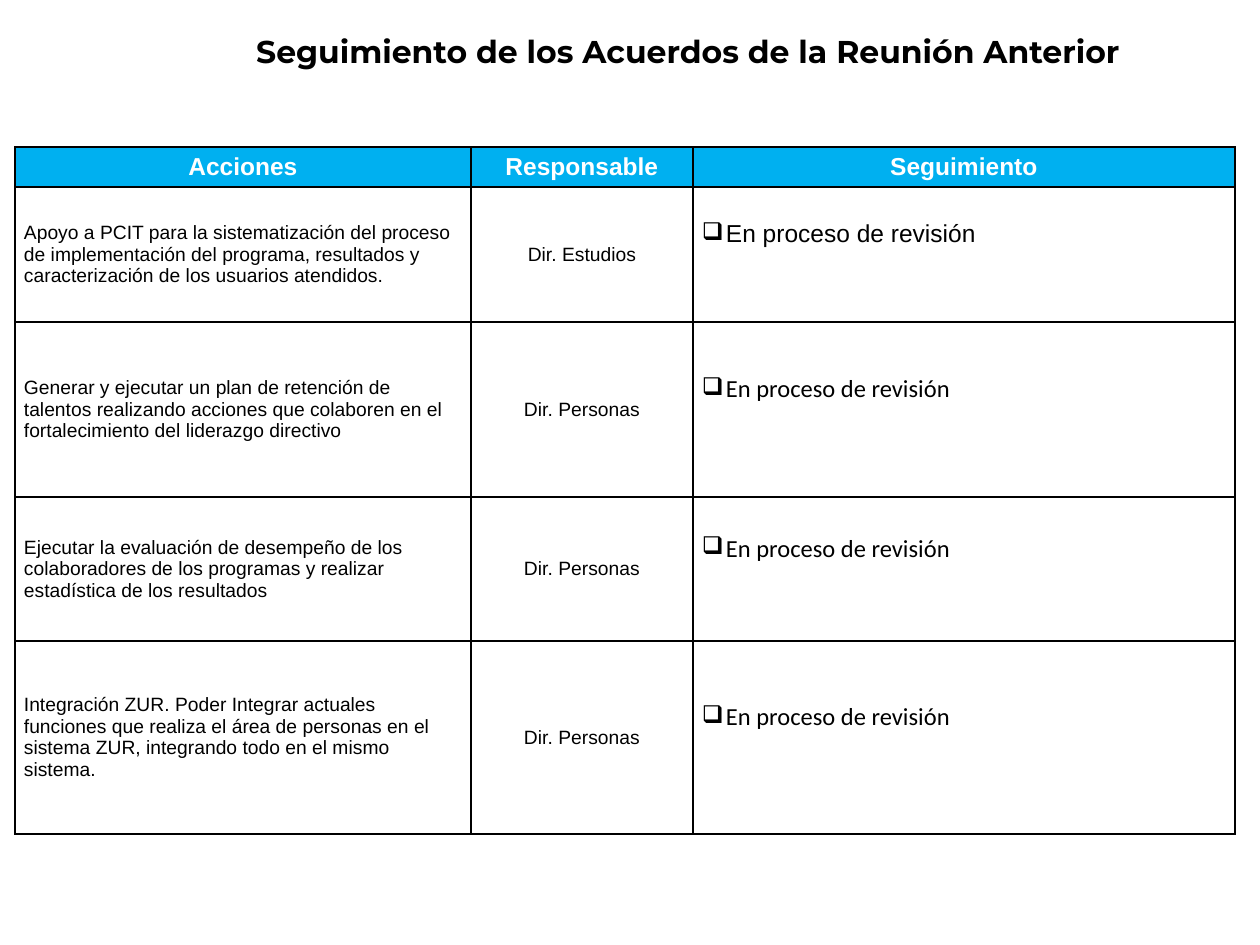
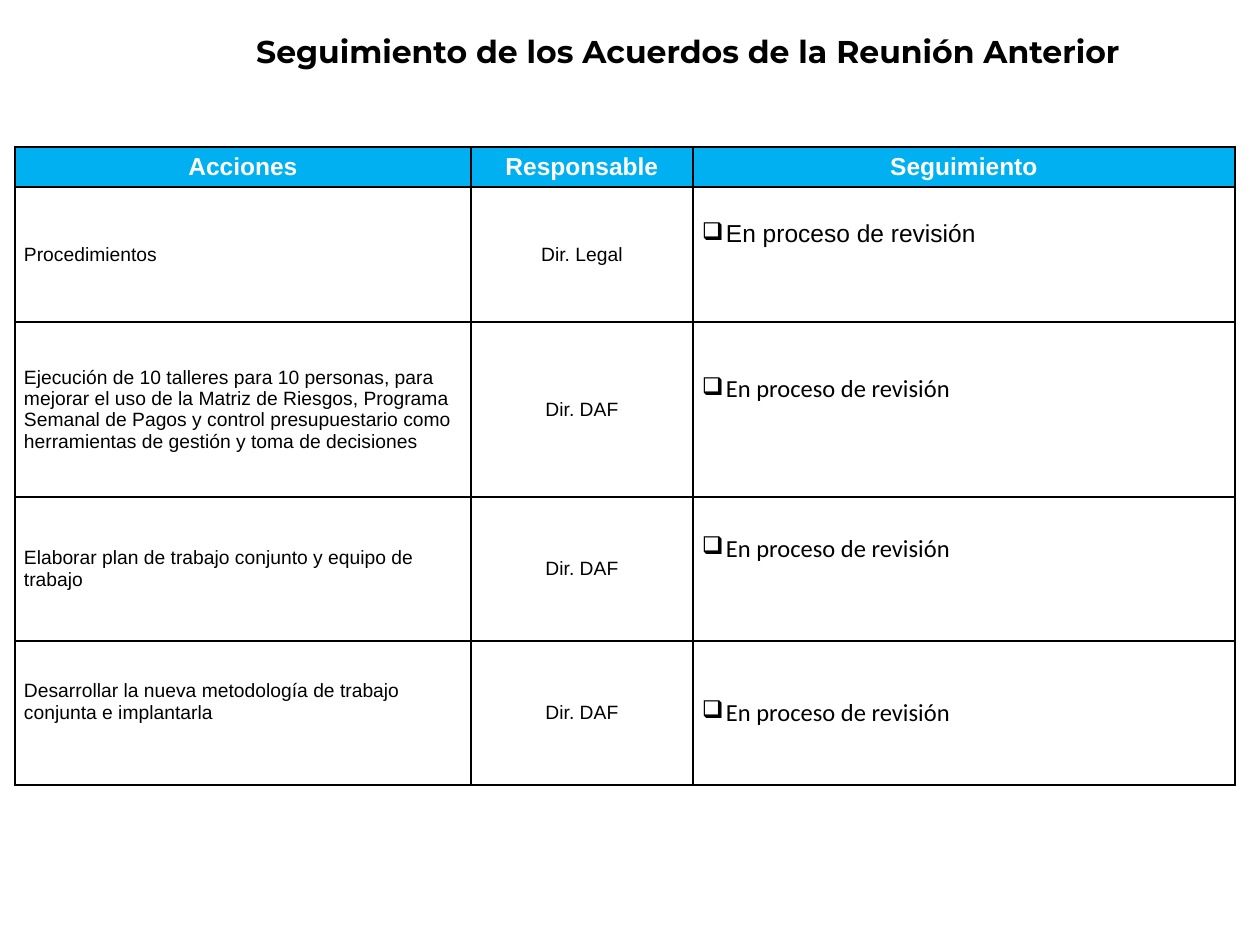
from pptx import Presentation
from pptx.dml.color import RGBColor
from pptx.enum.text import MSO_ANCHOR, MSO_AUTO_SIZE, PP_ALIGN
from pptx.oxml import parse_xml
from pptx.oxml.ns import nsdecls
from pptx.util import Pt

MIDDLE = MSO_ANCHOR.MIDDLE
NO_AUTOFIT = MSO_AUTO_SIZE.NONE
LEFT, CENTER = PP_ALIGN.LEFT, PP_ALIGN.CENTER

TITLE = "Seguimiento de los Acuerdos de la Reunión Anterior"
HEADINGS = ["Acciones", "Responsable", "Seguimiento"]
STATUS = "En proceso de revisión"
STATUS_FONTS = ["Arial", "Calibri", "Calibri", "Calibri"]

AGREEMENTS = [
    {
        "rows": [
            ("Apoyo a PCIT para la sistematización del proceso de implementación del "
             "programa, resultados y caracterización de los usuarios atendidos.", "Dir. Estudios"),
            ("Generar y ejecutar un plan de retención de talentos realizando acciones que "
             "colaboren en el fortalecimiento del liderazgo directivo", "Dir. Personas"),
            ("Ejecutar la evaluación de desempeño de los colaboradores de los programas y "
             "realizar estadística de los resultados", "Dir. Personas"),
            ("Integración ZUR. Poder Integrar actuales funciones que realiza el área de "
             "personas en el sistema ZUR, integrando todo en el mismo sistema.", "Dir. Personas"),
        ],
        "heights": [40, 135, 175, 144, 193],
        "action_lifts": [0, 0, 0, 0],
        "status_lifts": [20, 20, 20, 20],
    },
    {
        "rows": [
            ("Procedimientos", "Dir. Legal"),
            ("Ejecución de 10 talleres para 10 personas, para mejorar el uso de la Matriz de "
             "Riesgos, Programa Semanal de Pagos y control presupuestario como herramientas "
             "de gestión y toma de decisiones", "Dir. DAF"),
            ("Elaborar plan de trabajo conjunto y equipo de trabajo", "Dir. DAF"),
            ("Desarrollar la nueva metodología de trabajo conjunta e implantarla", "Dir. DAF"),
        ],
        "heights": [40, 135, 175, 144, 144],
        "action_lifts": [0, 0, 0, 11],
        "status_lifts": [20, 20, 20, 0],
    },
]

COLORS = {"header": "00B0F0", "text": "000000", "paper": "FFFFFF", "border": "000000"}
SLIDE_SIZE = (1260, 945)
TITLE_BOX = (174, 0, 1022, 102)
TABLE_ORIGIN = (15, 147)
COLUMN_WIDTHS = [456, 222, 542]
HEADER_INSET, BODY_INSET, BULLET_INDENT = 4, 9, 24


def px(length):
    """Turn pixels into EMU."""
    return round(length * 914400 / 126)


def color(name):
    """Look up a named colour."""
    return RGBColor.from_string(COLORS[name])


def style_paragraph(para, size, font="Arial", ink="text", bold=False, align=LEFT):
    """Set the alignment and font of a paragraph."""
    para.alignment = align
    para.font.size = Pt(size)
    para.font.name = font
    para.font.bold = bold
    para.font.color.rgb = color(ink)


def add_bullet(para):
    """Give a paragraph a hanging checkbox bullet."""
    properties = para._p.get_or_add_pPr()
    properties.set("marL", str(px(BULLET_INDENT)))
    properties.set("indent", str(-px(BULLET_INDENT)))
    properties.append(parse_xml(
        f'<a:buClr {nsdecls("a")}><a:srgbClr val="{COLORS["text"]}"/></a:buClr>'))
    properties.append(parse_xml(f'<a:buChar {nsdecls("a")} char="❑"/>'))


def add_borders(cell):
    """Draw a one-point line on each side of a cell."""
    properties = cell._tc.get_or_add_tcPr()
    for index, side in enumerate("LRTB"):
        properties.insert(index, parse_xml(
            f'<a:ln{side} {nsdecls("a")} w="{Pt(1)}"><a:solidFill>'
            f'<a:srgbClr val="{COLORS["border"]}"/></a:solidFill></a:ln{side}>'))


def fill_cell(cell, text, fill="paper", inset=BODY_INSET, lift=0, bullet=False, **style):
    """Write and format one cell, raising its text by the given lift."""
    cell.text = text
    cell.fill.solid()
    cell.fill.fore_color.rgb = color(fill)
    cell.vertical_anchor = MIDDLE
    cell.margin_left = cell.margin_right = px(inset)
    cell.margin_top = 0
    cell.margin_bottom = px(2 * lift)
    add_borders(cell)
    para = cell.text_frame.paragraphs[0]
    if bullet:
        add_bullet(para)
    style_paragraph(para, **style)


def add_title(page):
    """Place and format the slide title."""
    title = page.shapes.title
    title.left, title.top, title.width, title.height = map(px, TITLE_BOX)
    frame = title.text_frame
    frame.text = TITLE
    frame.word_wrap = True
    frame.auto_size = NO_AUTOFIT
    frame.vertical_anchor = MIDDLE
    frame.margin_left, frame.margin_right = px(19), px(13)
    style_paragraph(frame.paragraphs[0], 18, "Montserrat", bold=True, align=CENTER)


def add_agreement_table(page, agreements):
    """Add the table of actions, owners and follow-up."""
    heights = agreements["heights"]
    size = (sum(COLUMN_WIDTHS), sum(heights))
    table = page.shapes.add_table(
        len(heights), len(HEADINGS), *map(px, TABLE_ORIGIN + size)).table
    table.horz_banding = False
    for column, width in zip(table.columns, COLUMN_WIDTHS):
        column.width = px(width)
    for row, height in zip(table.rows, heights):
        row.height = px(height)
    for column, heading in enumerate(HEADINGS):
        fill_cell(table.cell(0, column), heading, "header", HEADER_INSET,
                  size=14, ink="paper", bold=True, align=CENTER)
    body = zip(agreements["rows"], agreements["action_lifts"],
               agreements["status_lifts"], STATUS_FONTS)
    for row, ((action, owner), action_lift, status_lift, font) in enumerate(body, 1):
        fill_cell(table.cell(row, 0), action, lift=action_lift, size=11)
        fill_cell(table.cell(row, 1), owner, size=11, align=CENTER)
        fill_cell(table.cell(row, 2), STATUS, lift=status_lift, bullet=True, size=14, font=font)


def main():
    """Build and save the deck."""
    deck = Presentation()
    deck.slide_width, deck.slide_height = map(px, SLIDE_SIZE)
    title_only = deck.slide_layouts.get_by_name("Title Only")
    for agreements in AGREEMENTS:
        page = deck.slides.add_slide(title_only)
        add_title(page)
        add_agreement_table(page, agreements)
    deck.save("out.pptx")


if __name__ == "__main__":
    main()
